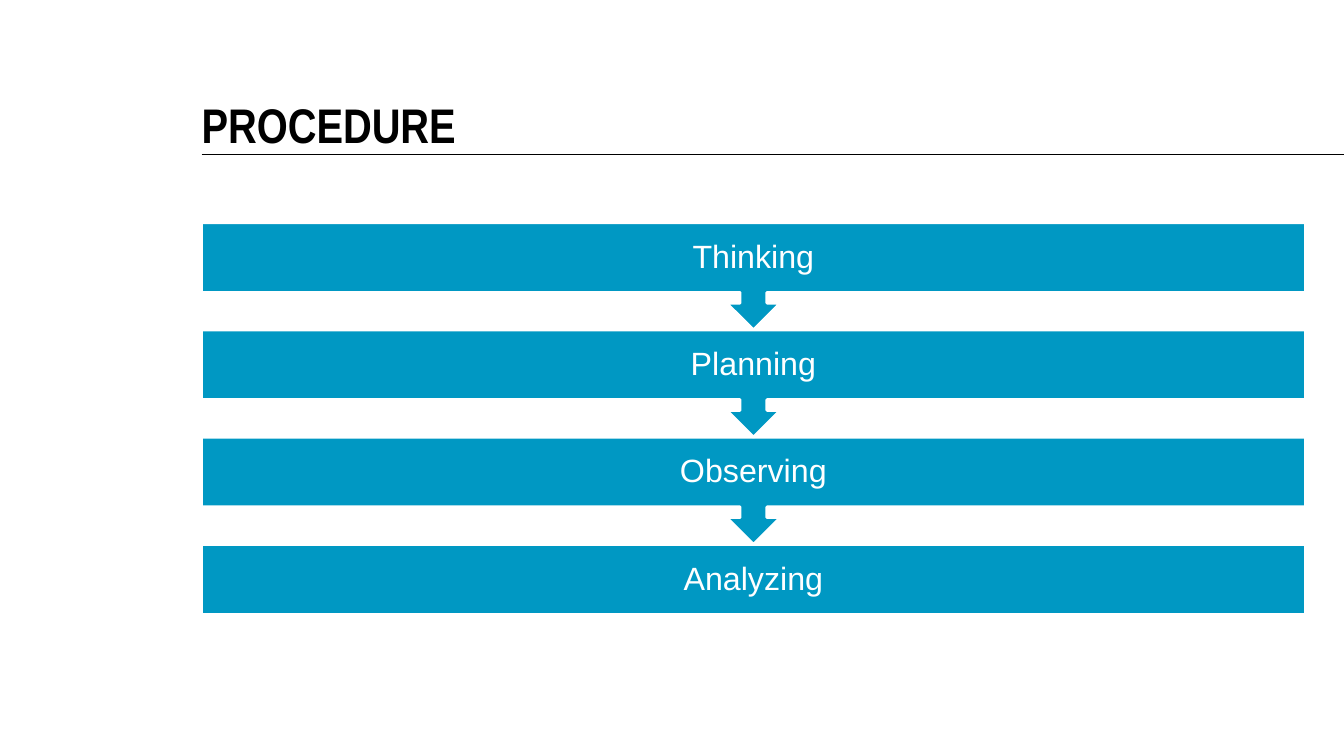
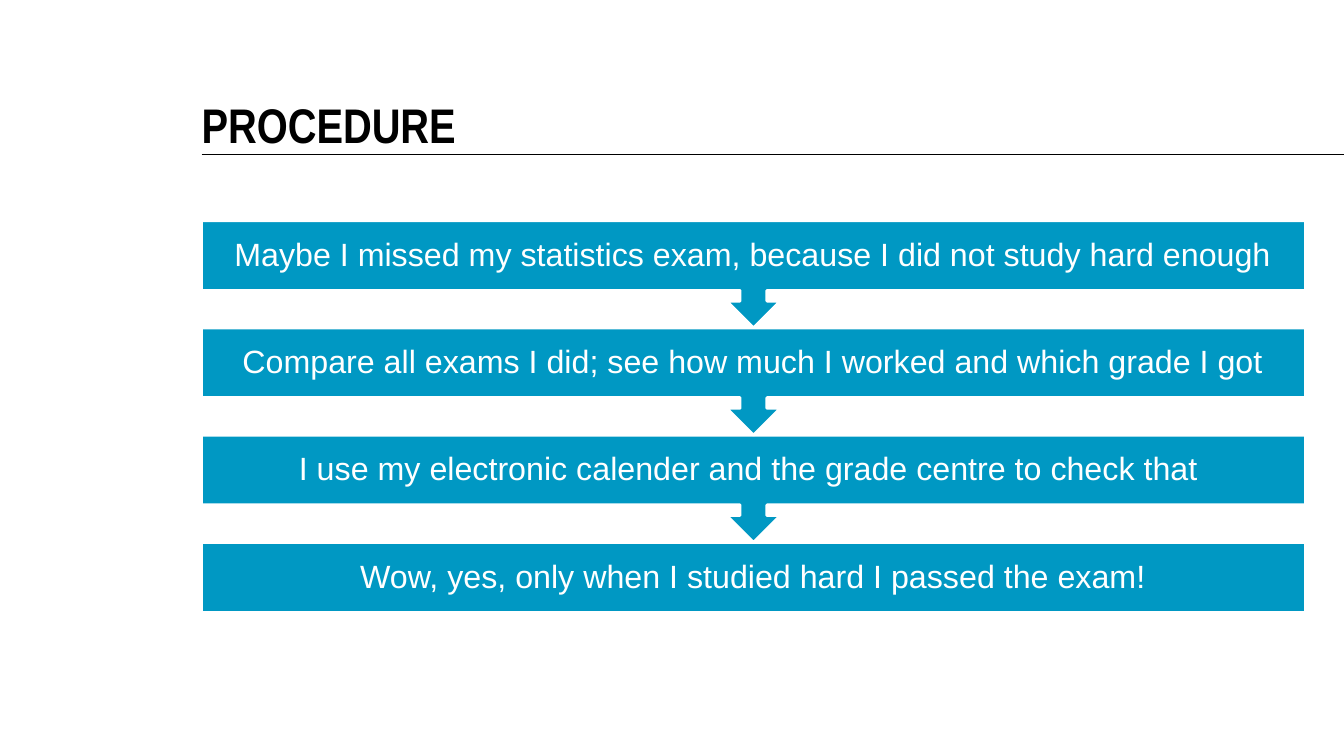
from pptx import Presentation, util as u
from pptx.dml.color import RGBColor
from pptx.enum import shapes, text
from pptx.oxml.ns import qn
from lxml import etree

INK, BLUE, WHITE = "000000", "0098C3", "FFFFFF"
LEFT, WIDE = 15, 82.13            # percent of the slide width
PITCH, BAR = 14.18, 9.33          # percent of the slide height
KIND = shapes.MSO_SHAPE

DECK = [
    ("PROCEDURE", 29.47, ["Thinking", "Planning", "Observing", "Analyzing"]),
    ("PROCEDURE", 29.2, [
        "Maybe I missed my statistics exam, because I did not study hard enough",
        "Compare all exams I did; see how much I worked and which grade I got",
        "I use my electronic calender and the grade centre to check that ",
        "Wow, yes, only when I studied hard I passed the exam!",
    ]),
]

prs = Presentation()
prs.slide_width, prs.slide_height = u.Inches(13.33), u.Inches(7.5)


def area(x, y, w, h):
    """Turn percentages of the slide into left, top, width and height."""
    wide, high = prs.slide_width / 100, prs.slide_height / 100
    return [round(n) for n in (x * wide, y * high, w * wide, h * high)]


def style(par, name, size, color, align, bold=False):
    par.alignment = align
    font = par.font
    font.name, font.size, font.bold = name, u.Pt(size), bold
    font.color.rgb = RGBColor.from_string(color)


for head, top, steps in DECK:
    slide = prs.slides.add_slide(prs.slide_layouts[5])

    title = slide.shapes.title
    title.left, title.top, title.width, title.height = area(LEFT, 9.6, 81.9, 10.67)
    frame = title.text_frame
    frame.text = head
    frame.auto_size = text.MSO_AUTO_SIZE.NONE
    frame.vertical_anchor = text.MSO_ANCHOR.BOTTOM
    frame.margin_left = frame.margin_right = frame.margin_top = frame.margin_bottom = 0
    par = frame.paragraphs[0]
    par.line_spacing = u.Pt(33.3)
    style(par, "Arial Narrow", 34.7, INK, text.PP_ALIGN.LEFT, True)

    x, y, w, _ = area(LEFT, 20.4, 100 - LEFT, 0)
    rule = slide.shapes.add_connector(shapes.MSO_CONNECTOR.STRAIGHT, x, y, x + w, y)
    rule.line.color.rgb = RGBColor.from_string(INK)
    rule.line.width = u.Pt(1)
    etree.SubElement(rule._element.spPr, qn("a:effectLst"))

    # Last step first, so that each arrow tip lies over the bar below it
    last = len(steps) - 1
    for i in range(last, -1, -1):
        kind, high = (KIND.RECTANGLE, BAR) if i == last else (KIND.DOWN_ARROW_CALLOUT, PITCH)
        step = slide.shapes.add_shape(kind, *area(LEFT, top + i * PITCH, WIDE, high))
        step.shadow.inherit = False
        step.fill.solid()
        step.fill.fore_color.rgb = RGBColor.from_string(BLUE)
        step.line.color.rgb = RGBColor.from_string(WHITE)
        step.line.width = u.Pt(2)
        frame = step.text_frame
        frame.text = steps[i]
        frame.word_wrap = True
        frame.vertical_anchor = text.MSO_ANCHOR.MIDDLE
        frame.margin_left = frame.margin_right = u.Inches(0.18)
        par = frame.paragraphs[0]
        par.line_spacing = 0.9
        style(par, "Arial", 23, WHITE, text.PP_ALIGN.CENTER)

prs.save("out.pptx")
